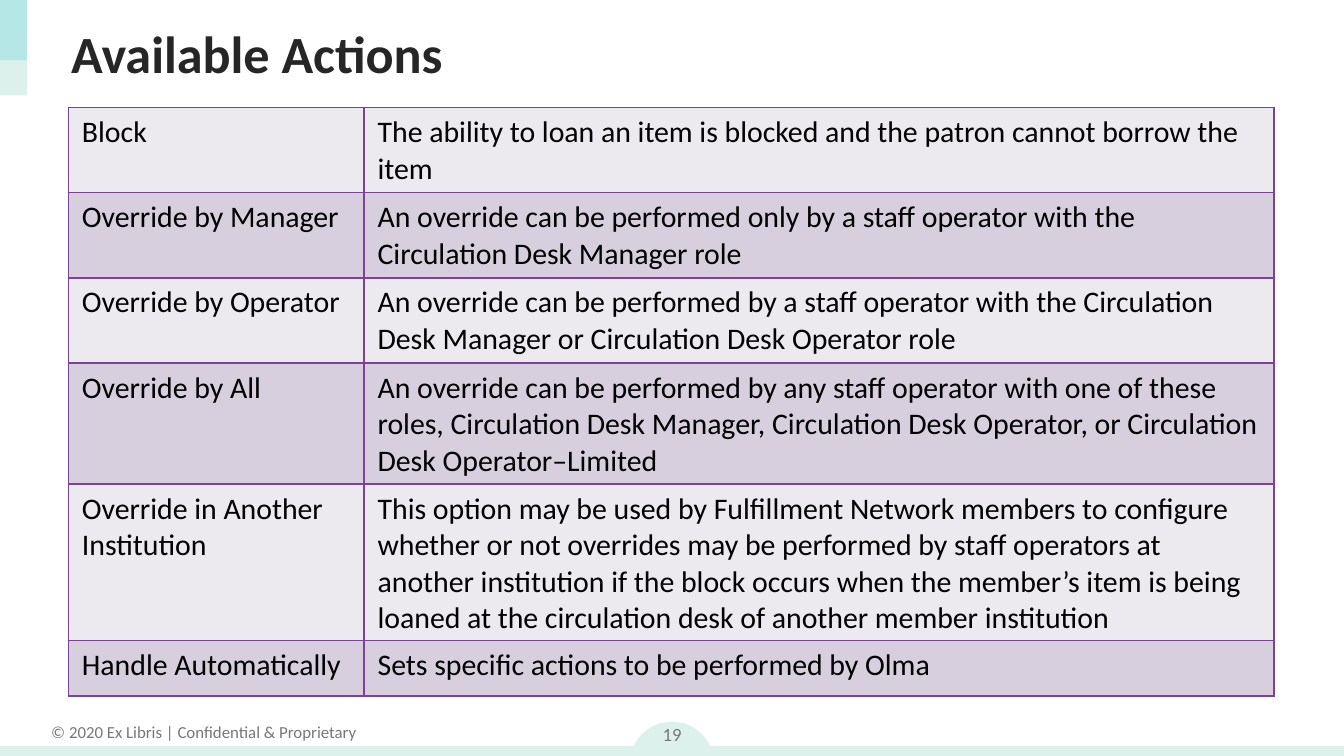
from lxml.etree import SubElement
from pptx import Presentation
from pptx.dml.color import RGBColor
from pptx.enum.shapes import MSO_SHAPE
from pptx.enum.text import MSO_ANCHOR, PP_ALIGN
from pptx.oxml.ns import qn
from pptx.util import Inches, Pt

WIDE = 10
HIGH = WIDE * 9 / 16
FONT = "Calibri"
MINT, AQUA, GREY, INK = "DCF1EC", "50CFDA", "787878", "262626"
EDGE, BANDS = "7C4299", ("ECE9EF", "D7CFDE")
COLS, ROW = (2.2, 6.77), 0.41  # rows grow with their text

ACTIONS = [
    ("Block",
     "The ability to loan an item is blocked and the patron cannot borrow "
     "the item"),
    ("Override by Manager",
     "An override can be performed only by a staff operator with the "
     "Circulation Desk Manager role"),
    ("Override by Operator",
     "An override can be performed by a staff operator with the Circulation "
     "Desk Manager or Circulation Desk Operator role"),
    ("Override by All",
     "An override can be performed by any staff operator with one of these "
     "roles, Circulation Desk Manager, Circulation Desk Operator, or "
     "Circulation Desk Operator–Limited"),
    ("Override in Another Institution",
     "This option may be used by Fulfillment Network members to configure "
     "whether or not overrides may be performed by staff operators at "
     "another institution if the block occurs when the member’s item is "
     "being loaned at the circulation desk of another member institution"),
    ("Handle Automatically",
     "Sets specific actions to be performed by Olma"),
]


def color(code):
    return RGBColor.from_string(code)


def inches(box):
    return [Inches(n) for n in box]


def style(para, size, code, bold=False, align=PP_ALIGN.LEFT):
    para.alignment = align
    font = para.font
    font.name, font.size, font.bold = FONT, Pt(size), bold
    font.color.rgb = color(code)


def block(slide, box, code, kind=MSO_SHAPE.RECTANGLE, alpha=None):
    """Add a plain filled shape; alpha is its opacity in percent."""
    shape = slide.shapes.add_shape(kind, *inches(box))
    shape.shadow.inherit = False
    shape.line.fill.background()
    shape.fill.solid()
    shape.fill.fore_color.rgb = color(code)
    if alpha is not None:
        props = shape.element.spPr
        tint = props.find(qn("a:solidFill"))[0]
        SubElement(tint, qn("a:alpha"), val=str(alpha * 1000))


def label(slide, box, text, size, wrap, anchor):
    frame = slide.shapes.add_textbox(*inches(box)).text_frame
    frame.word_wrap, frame.vertical_anchor = wrap, anchor
    frame.text = text
    style(frame.paragraphs[0], size, GREY, align=PP_ALIGN.CENTER)


def corner(slide, box):
    left, top, width, height = box
    block(slide, box, MINT)
    block(slide, (left, top, width, 0.63 * height), AQUA, alpha=27)


def footer(slide, box):
    left, top, width, height = box
    disc, page = 0.63, 0.59
    mid = left + width / 2
    block(slide, (mid - disc / 2, top + 0.11, disc, disc), MINT,
          MSO_SHAPE.OVAL)
    label(slide, (left + 0.27, top + 0.06, 2.49, 0.25),
          "© 2020 Ex Libris | Confidential & Proprietary", 9, False,
          MSO_ANCHOR.TOP)
    block(slide, (left, top + 0.29, width, 0.11), MINT)
    label(slide, (mid - page / 2, top, page, height), "19", 10, True,
          MSO_ANCHOR.MIDDLE)


def heading(slide, box, text):
    title = slide.shapes.title
    title.left, title.top, title.width, title.height = inches(box)
    frame = title.text_frame
    frame.text = text
    frame.vertical_anchor = MSO_ANCHOR.MIDDLE
    style(frame.paragraphs[0], 28, INK, bold=True)


def border(cell):
    props = cell._tc.get_or_add_tcPr()
    for place, side in enumerate(("lnL", "lnR", "lnT", "lnB")):
        line = SubElement(props, qn("a:" + side), w=str(Pt(1)))
        fill = SubElement(line, qn("a:solidFill"))
        SubElement(fill, qn("a:srgbClr"), val=EDGE)
        props.insert(place, line)


def grid(slide, box):
    frame = slide.shapes.add_table(len(ACTIONS), len(COLS), *inches(box))
    table = frame.table
    table.first_row = table.horz_banding = False
    for col, width in zip(table.columns, COLS):
        col.width = Inches(width)
    for i, (row, texts) in enumerate(zip(table.rows, ACTIONS)):
        row.height = Inches(ROW)
        for cell, text in zip(row.cells, texts):
            cell.text = text
            style(cell.text_frame.paragraphs[0], 16, "000000")
            cell.fill.solid()
            cell.fill.fore_color.rgb = color(BANDS[i % 2])
            border(cell)
    frame.width, frame.height = inches(box[2:])


def main():
    deck = Presentation()
    deck.slide_width, deck.slide_height = inches((WIDE, HIGH))
    slide = deck.slides.add_slide(deck.slide_layouts[5])
    footer(slide, (0, 5.26, WIDE, 0.4))
    corner(slide, (0, 0, 0.2, 0.71))
    heading(slide, (0.43, 0.08, 9.21, 0.63), "Available Actions")
    grid(slide, (0.51, 0.8, 8.98, 4.37))
    deck.save("out.pptx")


if __name__ == "__main__":
    main()
